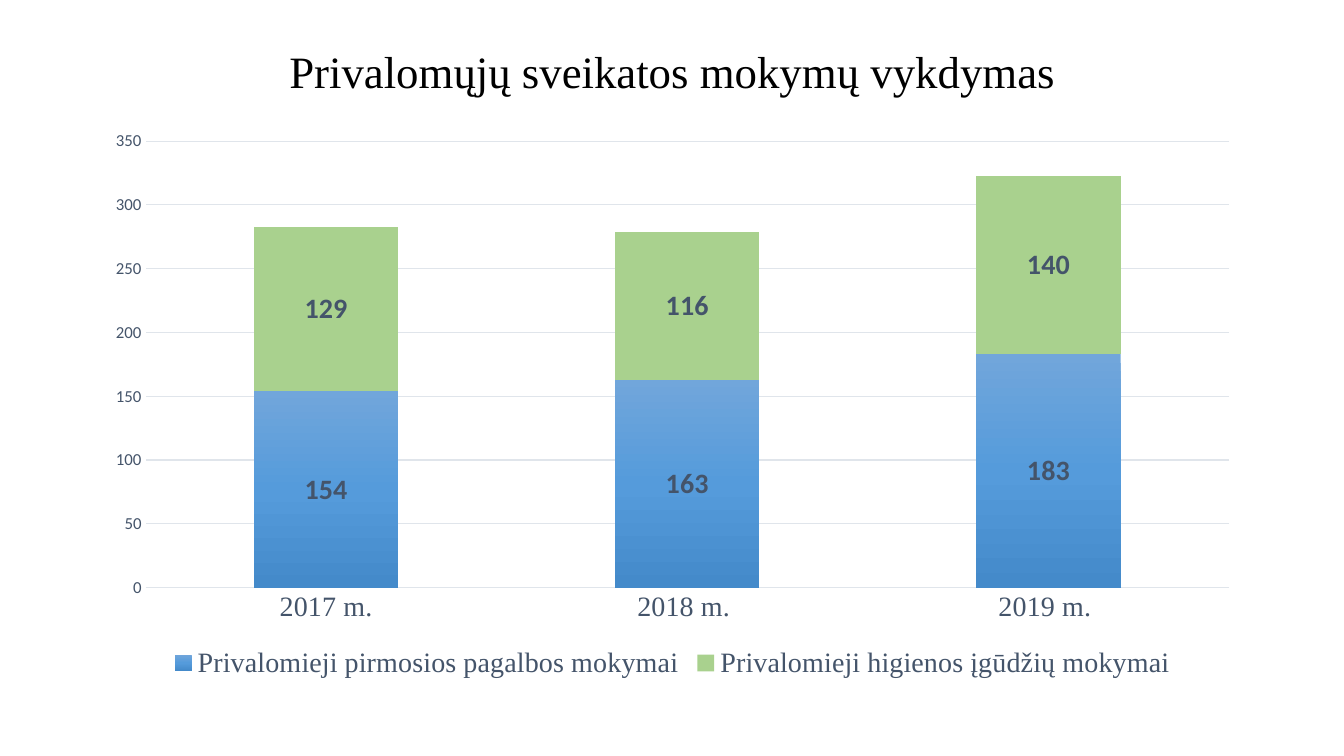
from copy import deepcopy

from pptx import Presentation
from pptx.chart.data import CategoryChartData
from pptx.dml.color import RGBColor
from pptx.enum import chart as ch, text
from pptx.util import Inches, Pt

# Content
TITLE = "Privalomųjų sveikatos mokymų vykdymas"
YEARS = ["2017 m.", "2018 m. ", "2019 m. "]
TRAININGS = {
    "Privalomieji pirmosios pagalbos mokymai": (154, 163, 183),
    "Privalomieji higienos įgūdžių mokymai": (129, 116, 140),
}

# Look
BLACK = RGBColor(0x00, 0x00, 0x00)
SLATE = RGBColor(0x44, 0x54, 0x6A)
GRID = RGBColor(0xE0, 0xE5, 0xEB)
GREEN = RGBColor(0xA9, 0xD1, 0x8E)
BLUES = [
    (0, RGBColor(0x71, 0xA6, 0xDB)),
    (0.5, RGBColor(0x55, 0x9B, 0xDB)),
    (1, RGBColor(0x44, 0x8A, 0xCA)),
]
SERIF, SANS = "Times New Roman", "Calibri"
LEFT, WIDTH = Inches(0.92), Inches(11.5)


def style_font(font, color, **attrs):
    for name, value in attrs.items():
        setattr(font, name, value)
    font.color.rgb = color


def style_line(line):
    line.color.rgb = GRID
    line.width = Pt(0.75)


prs = Presentation()
prs.slide_width, prs.slide_height = Inches(13.33), Inches(7.5)
s = prs.slides.add_slide(prs.slide_layouts[5])

# Title
title = s.shapes.title
title.left, title.top, title.width, title.height = LEFT, Inches(0.4), WIDTH, Inches(0.67)
tf = title.text_frame
tf.vertical_anchor = text.MSO_ANCHOR.MIDDLE
p = tf.paragraphs[0]
p.alignment, p.line_spacing = text.PP_ALIGN.CENTER, 0.9
r = p.add_run()
r.text = TITLE
style_font(r.font, BLACK, name=SERIF, size=Pt(32))

# Stacked columns
data = CategoryChartData()
data.categories = YEARS
for name, values in TRAININGS.items():
    data.add_series(name, values)
chart = s.shapes.add_chart(ch.XL_CHART_TYPE.COLUMN_STACKED, LEFT, Inches(1.19),
                           WIDTH, Inches(5.6), data).chart
chart.has_title = False
style_font(chart.font, BLACK, name=SANS, size=Pt(10))
plot = chart.plots[0]
plot.gap_width, plot.overlap, plot.vary_by_categories = 150, 100, False

# Axes
years, counts = chart.category_axis, chart.value_axis
for axis, font_name, size in ((years, SERIF, 20), (counts, SANS, 12)):
    axis.major_tick_mark = axis.minor_tick_mark = ch.XL_TICK_MARK.NONE
    style_font(axis.tick_labels.font, SLATE, name=font_name, size=Pt(size))
style_line(years.format.line)
style_line(counts.major_gridlines.format.line)
counts.format.line.fill.background()
counts.minimum_scale, counts.maximum_scale, counts.major_unit = 0, 350, 50

# Legend
chart.has_legend = True
chart.legend.position = ch.XL_LEGEND_POSITION.BOTTOM
chart.legend.include_in_layout = False
style_font(chart.legend.font, SLATE, name=SERIF, size=Pt(20))

# Series fills: the gradient gets a third stop
first_aid, hygiene = plot.series
hygiene.format.fill.solid()
hygiene.format.fill.fore_color.rgb = GREEN
fill = first_aid.format.fill
fill.gradient()
fill.gradient_angle = 270
stops = first_aid._element.xpath("c:spPr/a:gradFill/a:gsLst")[0]
stops.append(deepcopy(stops[0]))
for stop, (position, color) in zip(fill.gradient_stops, BLUES):
    stop.position = position
    stop.color.rgb = color

# Value labels
for series in plot.series:
    labels = series.data_labels
    labels.show_value = True
    labels.position = ch.XL_LABEL_POSITION.CENTER
    style_font(labels.font, SLATE, name=SANS, size=Pt(20), bold=True)

prs.save("out.pptx")
